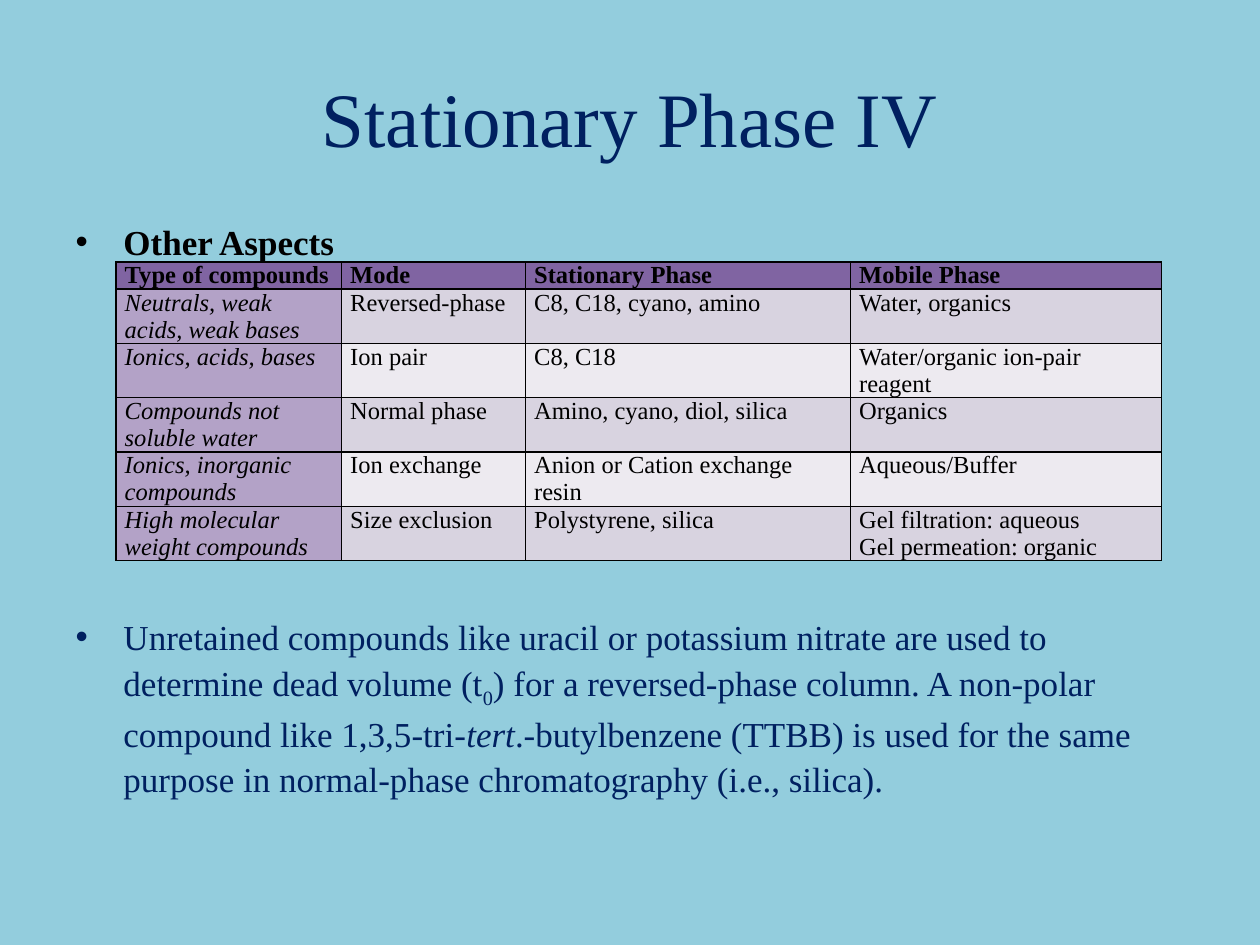
from dataclasses import dataclass

from lxml import etree
from pptx import Presentation
from pptx.dml.color import RGBColor
from pptx.enum.text import MSO_ANCHOR, MSO_AUTO_SIZE, PP_ALIGN
from pptx.oxml.ns import qn
from pptx.util import Inches, Pt

CENTER, LEFT = PP_ALIGN.CENTER, PP_ALIGN.LEFT
MIDDLE, TOP = MSO_ANCHOR.MIDDLE, MSO_ANCHOR.TOP
FIXED_SIZE = MSO_AUTO_SIZE.NONE
TITLE_AND_CONTENT = 1


@dataclass(frozen=True)
class Theme:
    """Colours, font and type sizes of the deck."""

    font: str = "Times New Roman"
    page: str = "93CDDD"
    navy: str = "002060"
    black: str = "000000"
    header: str = "8064A2"
    first_column: str = "B3A2C7"
    bands: tuple = ("D8D3E0", "EDEAF0")
    title_size: int = 44
    body_size: int = 20
    table_size: int = 14
    border: int = 1


def apply(target, values):
    """Set each named attribute on the target."""
    for name, value in values.items():
        setattr(target, name, value)


class SlideBuilder:
    """Holds the theme and the current slide and adds elements to it."""

    def __init__(self, deck, theme):
        self.deck, self.theme = deck, theme
        self.page = deck.slides.add_slide(deck.slide_layouts[TITLE_AND_CONTENT])
        background = self.page.background.fill
        background.solid()
        background.fore_color.rgb = RGBColor.from_string(theme.page)

    def place(self, shape, left, top, width, height):
        """Position a shape by shares of the slide's size."""
        wide, high = self.deck.slide_width, self.deck.slide_height
        apply(shape, {"left": int(left * wide), "top": int(top * high),
                      "width": int(width * wide), "height": int(height * high)})

    def add_span(self, para, text, size, color, baseline=None, **styles):
        """Add one formatted span to a paragraph."""
        span = para.add_run()
        span.text = text
        apply(span.font, {"name": self.theme.font, "size": Pt(size), **styles})
        span.font.color.rgb = RGBColor.from_string(color)
        if baseline:
            span._r.get_or_add_rPr().set("baseline", str(baseline))

    def title(self, text, area):
        """Fill the title placeholder."""
        box = self.page.shapes.title
        self.place(box, *area)
        apply(box.text_frame, {"vertical_anchor": MIDDLE, "auto_size": FIXED_SIZE})
        para = box.text_frame.paragraphs[0]
        para.alignment = CENTER
        self.add_span(para, text, self.theme.title_size, self.theme.navy)

    def bullets(self, items, area, indent):
        """Fill the body placeholder with (space before, colour, spans) items."""
        box = self.page.placeholders[1]
        self.place(box, *area)
        frame = box.text_frame
        apply(frame, {"vertical_anchor": TOP, "auto_size": FIXED_SIZE})
        for index, (space, color, spans) in enumerate(items):
            para = frame.add_paragraph() if index else frame.paragraphs[0]
            apply(para, {"alignment": LEFT, "space_before": Pt(space), "line_spacing": 1.08})
            properties = para._p.get_or_add_pPr()
            properties.set("marL", str(Inches(indent)))
            properties.set("indent", str(-Inches(indent)))
            for text, styles in spans:
                self.add_span(para, text, self.theme.body_size, color, **styles)

    def table(self, rows, area, columns, lines):
        """Add a banded table; columns are widths in inches, lines are row weights."""
        shape = self.page.shapes.add_table(len(rows), len(columns), 0, 0, 0, 0)
        self.place(shape, *area)
        grid, height = shape.table, shape.height
        for column, width in zip(grid.columns, columns):
            column.width = Inches(width)
        for row, weight in zip(grid.rows, lines):
            row.height = int(height * weight / sum(lines))
        for row, texts in enumerate(rows):
            for column, text in enumerate(texts):
                self.cell(grid.cell(row, column), text, row, column)

    def cell(self, cell, text, row, column):
        """Fill, outline and letter one table cell."""
        theme = self.theme
        body_fill = theme.bands[(row - 1) % 2] if column else theme.first_column
        apply(cell, {"margin_left": Inches(0.07), "margin_right": Inches(0.07),
                     "margin_top": 0, "margin_bottom": 0, "vertical_anchor": TOP})
        cell.fill.solid()
        cell.fill.fore_color.rgb = RGBColor.from_string(body_fill if row else theme.header)
        for index, line in enumerate(text.split("\n")):
            frame = cell.text_frame
            para = frame.add_paragraph() if index else frame.paragraphs[0]
            self.add_span(para, line, theme.table_size, theme.black,
                          bold=row == 0, italic=row > 0 and column == 0)
        properties = cell._tc.get_or_add_tcPr()
        for position, side in enumerate(("lnL", "lnR", "lnT", "lnB")):
            edge = etree.Element(qn(f"a:{side}"), w=str(Pt(theme.border)))
            paint = etree.SubElement(edge, qn("a:solidFill"))
            etree.SubElement(paint, qn("a:srgbClr"), val=theme.black)
            properties.insert(position, edge)


COMPOUNDS = [
    ("Type of compounds", "Mode", "Stationary Phase", "Mobile Phase"),
    ("Neutrals, weak acids, weak bases", "Reversed-phase",
     "C8, C18, cyano, amino", "Water, organics"),
    ("Ionics, acids, bases", "Ion pair", "C8, C18", "Water/organic ion-pair reagent"),
    ("Compounds not soluble water", "Normal phase",
     "Amino, cyano, diol, silica", "Organics"),
    ("Ionics, inorganic compounds", "Ion exchange",
     "Anion or Cation exchange resin", "Aqueous/Buffer"),
    ("High molecular weight compounds", "Size exclusion", "Polystyrene, silica",
     "Gel filtration: aqueous\nGel permeation: organic"),
]

DEAD_VOLUME = [
    ("Unretained compounds like uracil or potassium nitrate are used to "
     "determine dead volume (t", {}),
    ("0", {"baseline": -25000}),
    (") for a reversed-phase column. A non-polar compound like 1,3,5-tri-", {}),
    ("tert", {"italic": True}),
    (".-butylbenzene (TTBB) is used for the same purpose in normal-phase "
     "chromatography (i.e., silica).", {}),
]


def main():
    """Build and save the slide."""
    deck = Presentation()
    deck.slide_width, deck.slide_height = Inches(10), Inches(7.5)
    theme = Theme()
    slide = SlideBuilder(deck, theme)
    slide.title("Stationary Phase IV", (0.05, 0.04, 0.9, 1.25 / 7.5))
    slide.bullets(
        [(4, theme.black, [("Other Aspects", {"bold": True})]),
         (200, theme.navy, DEAD_VOLUME)],
        (0.05, 1.67 / 7.5, 0.9, 5.58 / 7.5), indent=0.38)
    slide.table(COMPOUNDS, (0.092, 2.08 / 7.5, 0.83, 2.37 / 7.5),
                columns=(1.79, 1.46, 2.58, 2.47), lines=(1, 2, 2, 2, 2, 2))
    deck.save("out.pptx")


if __name__ == "__main__":
    main()
